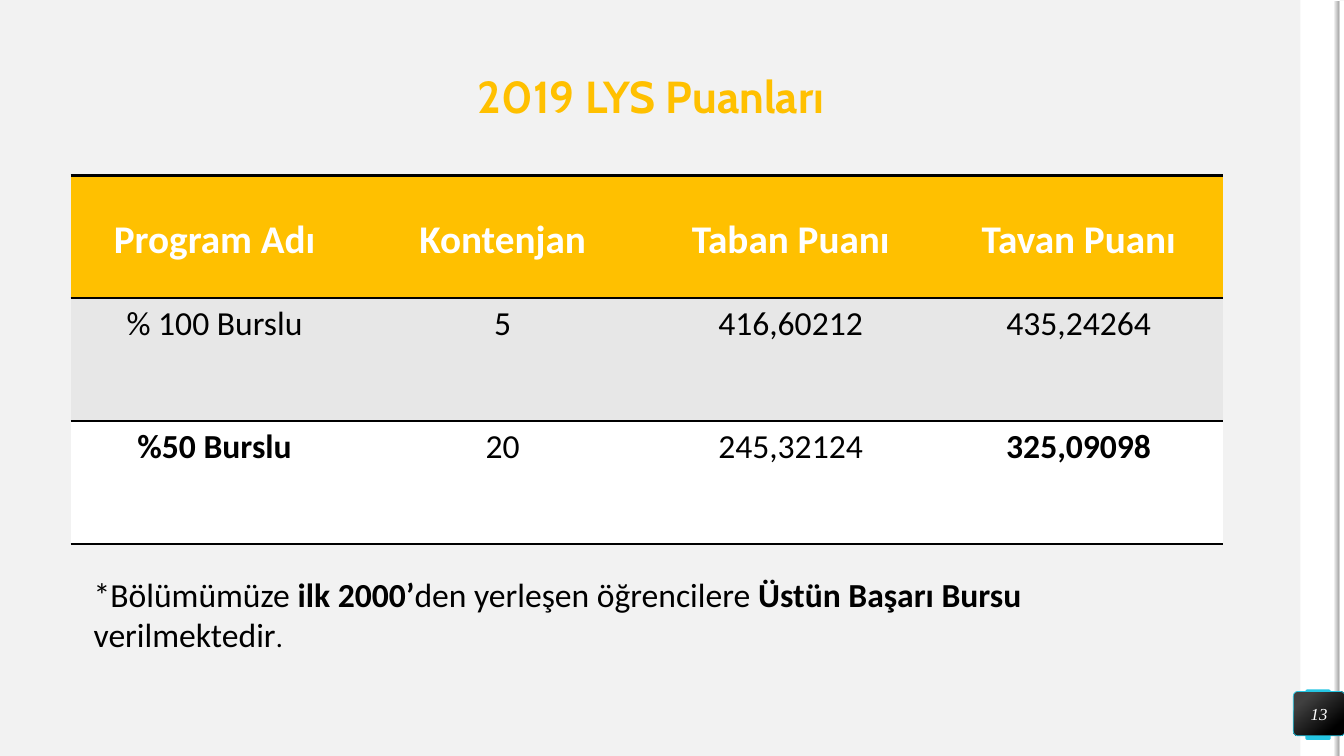
from lxml.etree import SubElement
from pptx import Presentation
from pptx.dml.color import RGBColor
from pptx.enum.shapes import MSO_SHAPE as Shape
from pptx.enum.text import MSO_ANCHOR as Anchor, MSO_AUTO_SIZE as AutoSize, PP_ALIGN as Align
from pptx.oxml.ns import qn
from pptx.util import Inches, Pt

COLORS = {
    "background": "F2F2F2", "white": "FFFFFF", "black": "000000",
    "gold": "FFC000", "band": "E7E7E7", "cyan": "25C6E3",
    "edge": "A6A6A6", "charcoal": "404040",
}

deck = Presentation()
deck.slide_width, deck.slide_height = Inches(13.33), Inches(7.5)
column, row = deck.slide_width / 100, deck.slide_height / 100
page = deck.slides.add_slide(deck.slide_layouts[5])
page.background.fill.solid()
page.background.fill.fore_color.rgb = RGBColor.from_string(COLORS["background"])


def area(left, top, width, height):
    return int(left * column), int(top * row), int(width * column), int(height * row)


def add_span(para, text, size, color, font="Calibri", bold=False, italic=False):
    span = para.add_run()
    span.text = text
    span.font.name, span.font.size = font, Pt(size)
    span.font.bold, span.font.italic = bold, italic
    span.font.color.rgb = RGBColor.from_string(COLORS[color])


panels = [
    (Shape.RECTANGLE, (96.75, 0, 2.93, 100), 0, None, [(0, "white")], 0),
    (Shape.ROUNDED_RECTANGLE, (97.13, 91.2, 1.88, 6.67), 0, 0.07, [(0, "cyan")], 0),
    (Shape.RECTANGLE, (71.7, 49.73, 56.25, 0.67), 90, None, [(0, "white")], 0),
    (Shape.RECTANGLE, (71.33, 49.73, 56.25, 0.67), 90, None,
     [(0, "background"), (1, "edge")], 90),
    (Shape.ROUNDED_RECTANGLE, (96.23, 91.47, 3.83, 5.87), 0, 0.1,
     [(0.2, "charcoal"), (0.82, "black")], 310),
]
for kind, place, rotation, rounding, stops, angle in panels:
    panel = page.shapes.add_shape(kind, *area(*place))
    panel.shadow.inherit = False
    panel.rotation = rotation
    panel.line.fill.background()
    if rounding:
        panel.adjustments[0] = rounding
    if len(stops) == 1:
        panel.fill.solid()
        panel.fill.fore_color.rgb = RGBColor.from_string(COLORS[stops[0][1]])
    else:
        panel.fill.gradient()
        panel.fill.gradient_angle = angle
        for stop, (position, color) in zip(panel.fill.gradient_stops, stops):
            stop.position = position
            stop.color.rgb = RGBColor.from_string(COLORS[color])

badge = panel
badge.line.color.rgb = RGBColor.from_string(COLORS["cyan"])
badge.line.width = Pt(0.5)

title = page.shapes.title
title.left, title.top, title.width, title.height = area(3.53, 6.27, 89.85, 13.6)
headings = [
    (title, "2019 LYS Puanları", 32, "gold", "Cabin", True, False),
    (badge, "13", 12, "white", "Times New Roman", False, True),
]
for shape, text, size, color, font, bold, italic in headings:
    frame = shape.text_frame
    frame.margin_left = frame.margin_top = frame.margin_right = frame.margin_bottom = 0
    frame.vertical_anchor = Anchor.MIDDLE
    frame.paragraphs[0].alignment = Align.CENTER
    add_span(frame.paragraphs[0], text, size, color, font, bold, italic)
title.text_frame.paragraphs[0].line_spacing = 0.9

scores = [
    ["Program Adı", "Kontenjan", "Taban Puanı", "Tavan Puanı"],
    ["% 100 Burslu", "5", "416,60212", "435,24264"],
    ["%50 Burslu", "20", "245,32124", "325,09098"],
]
row_fills = ["gold", "band", "white"]
row_borders = [{"a:lnT": 2, "a:lnB": 1.5}, {"a:lnT": 1.5}, {"a:lnB": 2}]
bold_scores = {"%50 Burslu", "325,09098"}
table = page.shapes.add_table(3, 4, *area(5.25, 23.2, 85.73, 48.8)).table
table.first_row = table.horz_banding = False
table._tbl.tblPr.find(qn("a:tableStyleId")).text = "{2D5ABB26-0587-4C30-8999-92F81FD0307C}"

for r, texts in enumerate(scores):
    for c, text in enumerate(texts):
        cell = table.cell(r, c)
        para = cell.text_frame.paragraphs[0]
        para.alignment = Align.CENTER
        if r == 0:
            cell.vertical_anchor = Anchor.MIDDLE
            cell.margin_left = cell.margin_right = Inches(0.05)
            cell.margin_top = cell.margin_bottom = 0
            para.line_spacing = 1.15
            add_span(para, text, 28, "white", bold=True)
        else:
            add_span(para, text, 24, "black", bold=text in bold_scores)
        for side, width in row_borders[r].items():
            border = SubElement(cell._tc.get_or_add_tcPr(), qn(side), w=str(Pt(width)))
            paint = SubElement(border, qn("a:solidFill"))
            SubElement(paint, qn("a:srgbClr"), val=COLORS["black"])
        cell.fill.solid()
        cell.fill.fore_color.rgb = RGBColor.from_string(COLORS[row_fills[r]])

note = page.shapes.add_textbox(*area(6.23, 75.2, 84.75, 6.67)).text_frame
note.word_wrap = True
note.auto_size = AutoSize.SHAPE_TO_FIT_TEXT
note_spans = [
    ("*Bölümümüze ", 24, False), ("ilk 2000’", 24, True),
    ("den yerleşen öğrencilere ", 24, False), ("Üstün Başarı Bursu ", 24, True),
    ("verilmektedir", 24, False), (".", 20, False),
]
for text, size, bold in note_spans:
    add_span(note.paragraphs[0], text, size, "black", bold=bold)

deck.save("out.pptx")
